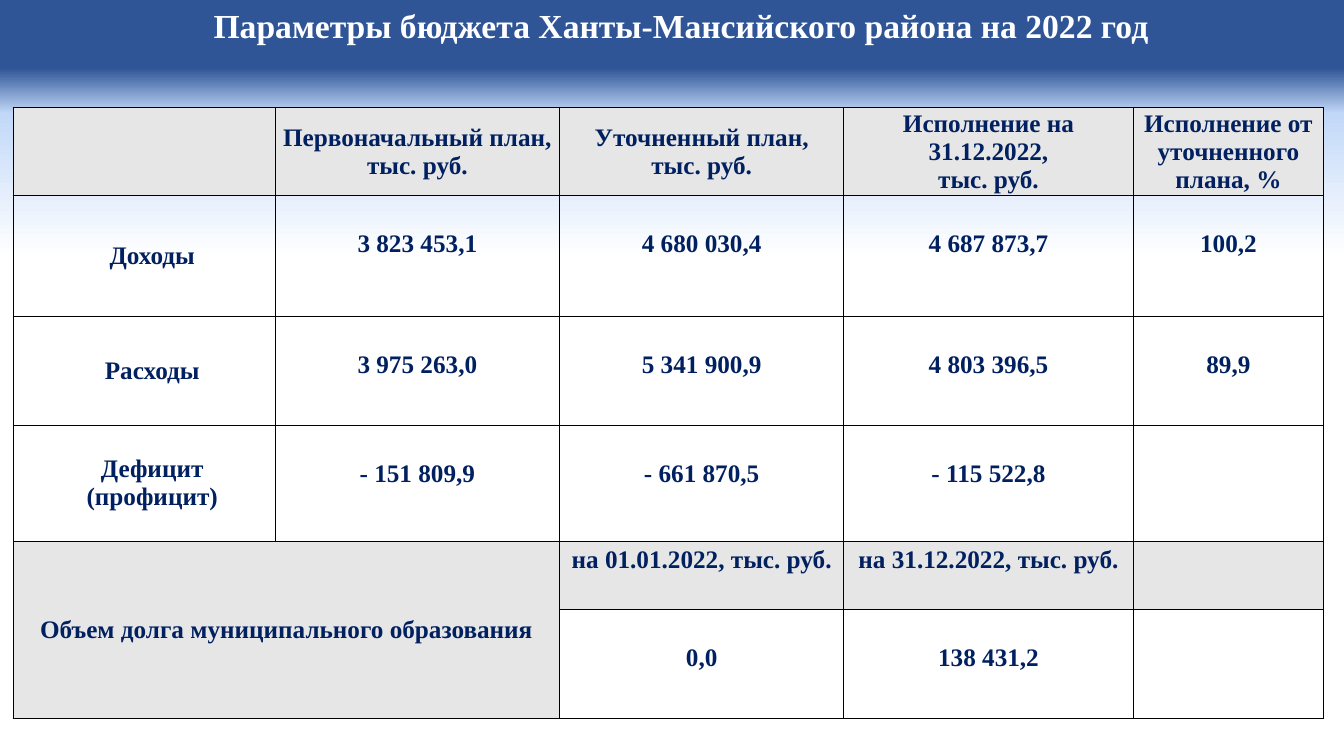
from copy import deepcopy
from lxml.etree import SubElement
from pptx import Presentation
from pptx.dml.color import RGBColor
from pptx.enum.text import MSO_ANCHOR, MSO_AUTO_SIZE, PP_ALIGN
from pptx.oxml.ns import qn
from pptx.util import Inches, Pt

TITLE = "Параметры бюджета Ханты-Мансийского района на 2022 год"
ROWS = [
    [[], ["Первоначальный план, тыс. руб."], ["Уточненный план,", "тыс. руб."],
     ["Исполнение на 31.12.2022,", "тыс. руб."], ["Исполнение от уточненного плана, %"]],
    [["Доходы"], ["3 823 453,1"], ["4 680 030,4"], ["4 687 873,7"], ["100,2"]],
    [["Расходы"], ["3 975 263,0"], ["5 341 900,9"], ["4 803 396,5"], ["89,9"]],
    [["Дефицит (профицит)"], ["- 151 809,9"], ["- 661 870,5"], ["- 115 522,8"], []],
    [["Объем долга муниципального образования"], [],
     ["на 01.01.2022, тыс. руб."], ["на 31.12.2022, тыс. руб."], []],
    [[], [], ["0,0"], ["138 431,2"], []],
]
COL_WIDTHS = [2.6, 2.82, 2.82, 2.87, 1.89]
ROW_HEIGHTS = [0.87, 1.2, 1.08, 1.15, 0.68, 1.08]
HEADER, DEBT = 0, 4
COLORS = {"band": "2F5597", "sky": "C2D8F8", "white": "FFFFFF",
          "navy": "002060", "gray": "E7E6E6", "border": "000000"}
STOPS = [(0.09, "band"), (0.15, "sky"), (0.34, "white")]
FONT = "Times New Roman"


def rgb(name):
    return RGBColor.from_string(COLORS[name])


def write(tf, lines, size, color):
    for i, line in enumerate(lines):
        p = tf.paragraphs[0] if i == 0 else tf.add_paragraph()
        p.alignment = PP_ALIGN.CENTER
        r = p.add_run()
        r.text = line
        r.font.name = FONT
        r.font.size = Pt(size)
        r.font.bold = True
        r.font.color.rgb = rgb(color)


def set_margins(box, left, top, right, bottom):
    box.margin_left, box.margin_top = Inches(left), Inches(top)
    box.margin_right, box.margin_bottom = Inches(right), Inches(bottom)


def add_borders(cell):
    tc_pr = cell._tc.get_or_add_tcPr()
    for i, side in enumerate(("lnL", "lnR", "lnT", "lnB")):
        ln = SubElement(tc_pr, qn(f"a:{side}"), w=str(Pt(1)))
        fill = SubElement(ln, qn("a:solidFill"))
        SubElement(fill, qn("a:srgbClr"), val=COLORS["border"])
        tc_pr.insert(i, ln)


def paint_background(s):
    fill = s.background.fill
    fill.gradient()
    fill.gradient_angle = 270
    gs_lst = s._element.find(".//" + qn("a:gsLst"))
    gs_lst.append(deepcopy(gs_lst[-1]))
    for stop, (position, color) in zip(fill.gradient_stops, STOPS):
        stop.position = position
        stop.color.rgb = rgb(color)


def add_title(s):
    sp = s.shapes.title
    sp.left, sp.top = Inches(1.85), Inches(0)
    sp.width, sp.height = Inches(9.81), Inches(0.5)
    tf = sp.text_frame
    tf.word_wrap = True
    tf.auto_size = MSO_AUTO_SIZE.NONE
    tf.vertical_anchor = MSO_ANCHOR.TOP
    write(tf, [TITLE], 24, "white")


def format_cell(cell, row, col):
    in_debt_label = row >= DEBT and col < 2
    if row in (HEADER, DEBT) or in_debt_label:
        cell.fill.solid()
        cell.fill.fore_color.rgb = rgb("gray")
    else:
        cell.fill.background()
    add_borders(cell)
    if row == HEADER or col == 0:
        cell.vertical_anchor = MSO_ANCHOR.MIDDLE
        indented = col == 0 and HEADER < row < DEBT
        set_margins(cell, 0.22 if indented else 0.06, 0, 0.06, 0)
    else:
        cell.vertical_anchor = MSO_ANCHOR.TOP
        set_margins(cell, 0.1, 0.05 if row == DEBT else 0.34, 0.1, 0.05)


def add_budget_table(s):
    table = s.shapes.add_table(
        len(ROWS), len(COL_WIDTHS), Inches(0.13), Inches(1.07),
        Inches(sum(COL_WIDTHS)), Inches(sum(ROW_HEIGHTS))).table
    table.first_row = table.horz_banding = False
    for column, width in zip(table.columns, COL_WIDTHS):
        column.width = Inches(width)
    for table_row, height in zip(table.rows, ROW_HEIGHTS):
        table_row.height = Inches(height)
    table.cell(DEBT, 0).merge(table.cell(DEBT + 1, 1))
    for row, cells in enumerate(ROWS):
        for col, lines in enumerate(cells):
            cell = table.cell(row, col)
            format_cell(cell, row, col)
            write(cell.text_frame, lines, 18, "navy")


def main():
    prs = Presentation()
    prs.slide_width, prs.slide_height = Inches(13.33), Inches(7.5)
    s = prs.slides.add_slide(prs.slide_layouts[5])
    paint_background(s)
    add_title(s)
    add_budget_table(s)
    prs.save("out.pptx")


if __name__ == "__main__":
    main()
